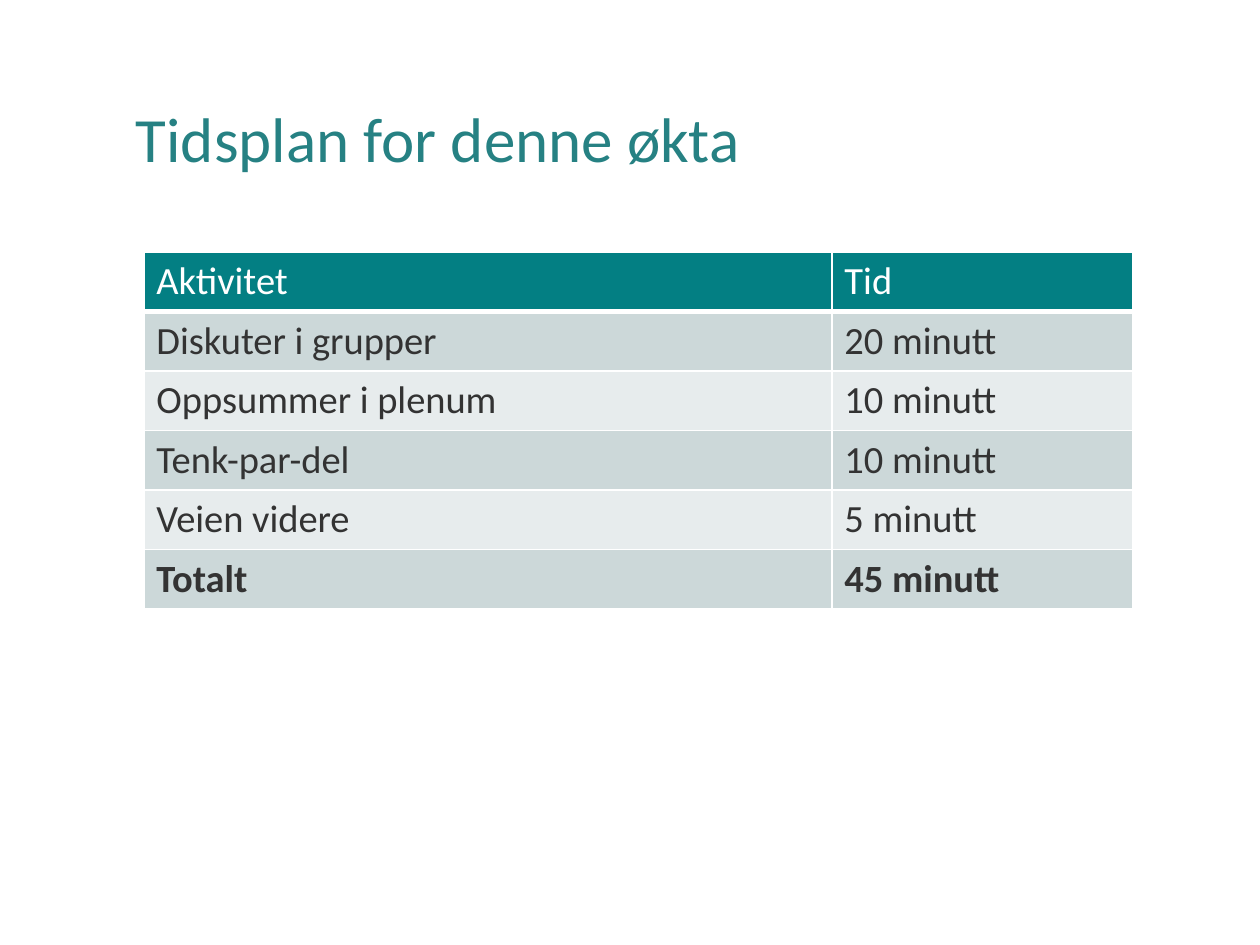
from dataclasses import dataclass

from lxml.etree import SubElement
from pptx import Presentation
from pptx.dml.color import RGBColor
from pptx.enum.text import MSO_ANCHOR
from pptx.oxml.ns import qn
from pptx.util import Cm, Pt


@dataclass(frozen=True)
class Theme:
    font: str = "Calibri"
    title_size: int = 36
    table_size: int = 22
    title: str = "268183"
    header: str = "037F83"
    bands: tuple = ("CCD8D9", "E7ECED")
    text: str = "333333"
    white: str = "FFFFFF"
    rule: int = 1
    header_rule: int = 3


THEME = Theme()

SCHEDULE = [
    ("Aktivitet", "Tid"),
    ("Diskuter i grupper", "20 minutt"),
    ("Oppsummer i plenum", "10 minutt"),
    ("Tenk-par-del", "10 minutt"),
    ("Veien videre", "5 minutt"),
    ("Totalt", "45 minutt"),
]
COLUMN_WIDTHS = (Cm(13.87), Cm(6.07))
ROW_HEIGHT = Cm(1.2)


def add_run(p, text, size, color, bold=False):
    r = p.add_run()
    r.text = text
    r.font.name = THEME.font
    r.font.size = Pt(size)
    r.font.bold = bold
    r.font.color.rgb = RGBColor.from_string(color)


def add_title(slide, text):
    sp = slide.shapes.add_textbox(Cm(2.49), Cm(1.02), Cm(21.06), Cm(3.68))
    tf = sp.text_frame
    tf.word_wrap = True
    tf.vertical_anchor = MSO_ANCHOR.MIDDLE
    p = tf.paragraphs[0]
    p.line_spacing = 0.9
    add_run(p, text, THEME.title_size, THEME.title)


def set_borders(cell, widths):
    """Draw white rules; widths maps a side (L, R, T, B) to points."""
    tc_pr = cell._tc.get_or_add_tcPr()
    for i, (side, width) in enumerate(widths.items()):
        ln = SubElement(tc_pr, qn(f"a:ln{side}"), w=str(Pt(width)))
        fill = SubElement(ln, qn("a:solidFill"))
        SubElement(fill, qn("a:srgbClr"), val=THEME.white)
        tc_pr.insert(i, ln)  # borders must precede the cell fill


def style_cell(cell, text, row, last_row):
    is_header = row == 0
    fill = THEME.header if is_header else THEME.bands[(row - 1) % 2]
    color = THEME.white if is_header else THEME.text
    cell.fill.solid()
    cell.fill.fore_color.rgb = RGBColor.from_string(fill)
    add_run(cell.text_frame.paragraphs[0], text, THEME.table_size, color,
            bold=row == last_row)
    widths = dict.fromkeys("LRTB", THEME.rule)
    if is_header:
        widths["B"] = THEME.header_rule
    elif row == 1:
        widths["T"] = THEME.header_rule
    set_borders(cell, widths)


def add_schedule(slide, rows):
    table = slide.shapes.add_table(
        len(rows), len(COLUMN_WIDTHS), Cm(2.9), Cm(5.08),
        sum(COLUMN_WIDTHS), ROW_HEIGHT * len(rows)).table
    for column, width in zip(table.columns, COLUMN_WIDTHS):
        column.width = width
    for i, texts in enumerate(rows):
        table.rows[i].height = ROW_HEIGHT
        for j, text in enumerate(texts):
            style_cell(table.cell(i, j), text, i, len(rows) - 1)


def main():
    prs = Presentation()
    prs.slide_width, prs.slide_height = Cm(25.4), Cm(19.05)
    slide = prs.slides.add_slide(prs.slide_layouts[6])
    add_title(slide, "Tidsplan for denne økta")
    add_schedule(slide, SCHEDULE)
    prs.save("out.pptx")


if __name__ == "__main__":
    main()
